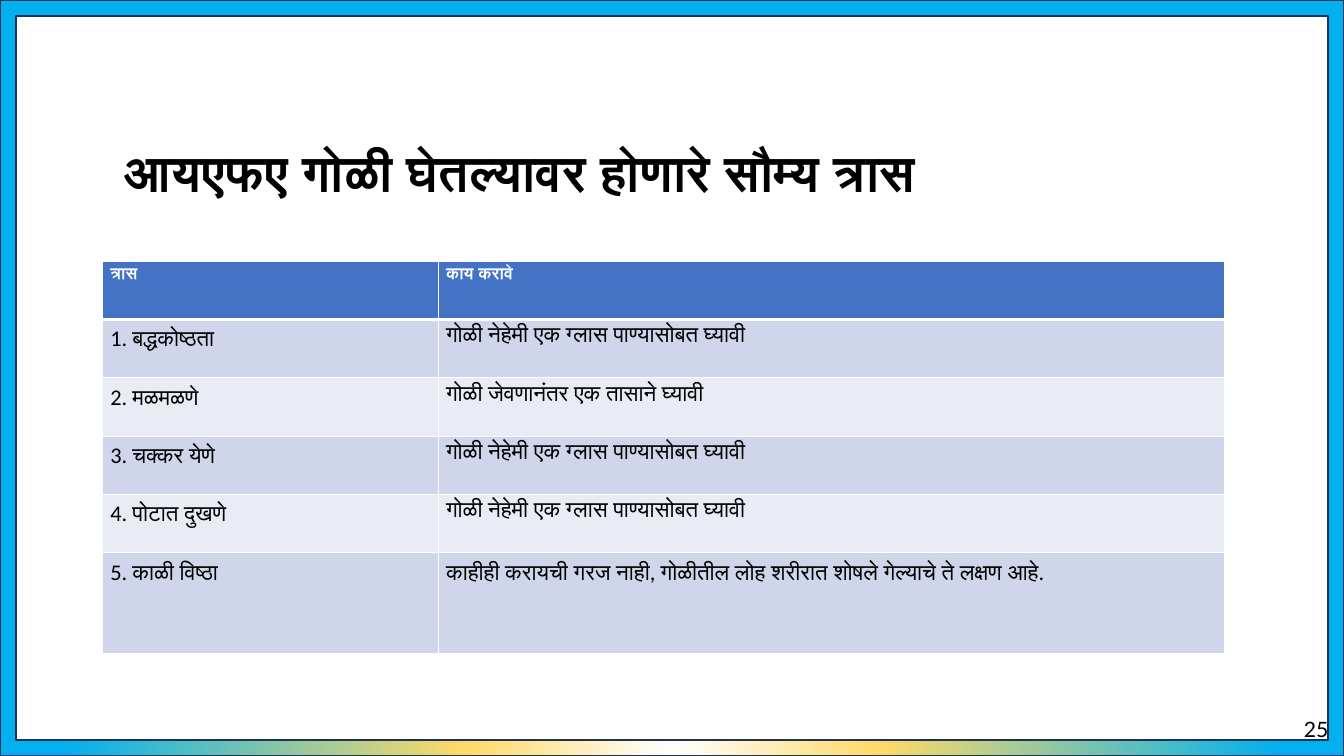
from pptx import Presentation
from pptx.dml.color import RGBColor
from pptx.enum.shapes import MSO_SHAPE as Shape
from pptx.enum.text import MSO_ANCHOR as Anchor
from pptx.oxml import parse_xml
from pptx.oxml.ns import nsdecls
from pptx.util import Cm, Pt

COLORS = {
    "ink": "000000", "white": "FFFFFF", "gold": "FFD966", "sky": "00B0F0",
    "frame_line": "1E3256", "header": "4472C4",
    "odd_row": "CFD5EA", "even_row": "E9EBF5",
}
TITLE_FORMAT = {"name": "Lato", "size": Pt(36), "bold": True}
NUMBER_FORMAT = {"name": "Lato", "size": Pt(15.1), "bold": False}
HEADER_FORMAT = {"name": "Calibri", "size": Pt(12), "bold": True}
BODY_FORMAT = {"name": "Calibri", "size": Pt(16), "bold": False}
CELL_MARGINS = {
    "margin_left": Cm(0.19), "margin_right": Cm(0.19),
    "margin_top": Cm(0.1), "margin_bottom": Cm(0.1),
}

WIDTH, HEIGHT = 33.87, 19.05
COLUMN_WIDTHS = [8.46, 19.81]
ROW_HEIGHTS = [1.47] * 5 + [2.54]
WITH_WATER = "गोळी नेहेमी एक ग्लास पाण्यासोबत घ्यावी"
REMEDIES = [
    ("त्रास", "काय करावे"),
    ("1. बद्धकोष्ठता", WITH_WATER),
    ("2. मळमळणे", "गोळी जेवणानंतर एक तासाने घ्यावी"),
    ("3. चक्कर येणे", WITH_WATER),
    ("4. पोटात दुखणे", WITH_WATER),
    ("5. काळी विष्ठा",
     "काहीही करायची गरज नाही, गोळीतील लोह शरीरात शोषले गेल्याचे ते लक्षण आहे."),
]


def color(name):
    return RGBColor.from_string(COLORS[name])


def set_all(target, values):
    for key, value in values.items():
        setattr(target, key, value)


def write(text_frame, text, font_format, ink="ink", spacing=1.0):
    para = text_frame.paragraphs[0]
    para.line_spacing = spacing
    span = para.add_run()
    span.text = text
    set_all(span.font, font_format)
    span.font.color.rgb = color(ink)


def add_text(page, box, text, font_format, anchor, wrap, spacing=1.0):
    text_frame = page.shapes.add_textbox(*map(Cm, box)).text_frame
    set_all(text_frame, {"word_wrap": wrap, "vertical_anchor": anchor})
    write(text_frame, text, font_format, spacing=spacing)


def add_frame(page, box):
    """Border with a radial gradient centred below the slide."""
    frame = page.shapes.add_shape(Shape.FRAME, *map(Cm, box))
    frame.adjustments[0] = 0.021
    frame.shadow.inherit = False
    frame.line.color.rgb = color("frame_line")
    frame.line.width = Pt(1)
    stops = "".join(
        f'<a:gs pos="{percent * 1000}"><a:srgbClr val="{COLORS[name]}"/></a:gs>'
        for percent, name in [(0, "white"), (27, "gold"), (79, "sky")])
    gradient = parse_xml(
        f'<a:gradFill {nsdecls("a")} rotWithShape="1"><a:gsLst>{stops}</a:gsLst>'
        '<a:path path="circle"><a:fillToRect l="50000" t="130000" '
        'r="50000" b="-30000"/></a:path></a:gradFill>')
    frame._element.spPr.prstGeom.addnext(gradient)


def add_borders(cell, row):
    widths = {"L": 1, "R": 1, "T": 3 if row == 1 else 1, "B": 3 if row == 0 else 1}
    properties = cell._tc.get_or_add_tcPr()
    for side, points in widths.items():
        properties.append(parse_xml(
            f'<a:ln{side} {nsdecls("a")} w="{Pt(points)}"><a:solidFill>'
            f'<a:srgbClr val="{COLORS["white"]}"/></a:solidFill></a:ln{side}>'))


def add_remedy_table(page, left, top):
    size = sum(COLUMN_WIDTHS), sum(ROW_HEIGHTS)
    table = page.shapes.add_table(
        len(REMEDIES), len(COLUMN_WIDTHS), *map(Cm, (left, top, *size))).table
    for column, width in zip(table.columns, COLUMN_WIDTHS):
        column.width = Cm(width)
    for index, (texts, height) in enumerate(zip(REMEDIES, ROW_HEIGHTS)):
        table.rows[index].height = Cm(height)
        if index == 0:
            fill, ink, font_format = "header", "white", HEADER_FORMAT
        else:
            fill = "odd_row" if index % 2 else "even_row"
            ink, font_format = "ink", BODY_FORMAT
        for cell, text in zip(table.rows[index].cells, texts):
            set_all(cell, CELL_MARGINS)
            add_borders(cell, index)
            cell.fill.solid()
            cell.fill.fore_color.rgb = color(fill)
            write(cell.text_frame, text, font_format, ink, spacing=1.07)


def main():
    deck = Presentation()
    deck.slide_width, deck.slide_height = Cm(WIDTH), Cm(HEIGHT)
    page = deck.slides.add_slide(deck.slide_layouts[6])
    add_text(page, (2.9, 2.26, 28.27, 4.32), "आयएफए गोळी घेतल्यावर होणारे सौम्य त्रास",
             TITLE_FORMAT, Anchor.MIDDLE, True, spacing=0.9)
    add_frame(page, (0, 0, WIDTH, HEIGHT))
    add_text(page, (32.61, 17.93, 1.24, 0.66), "25", NUMBER_FORMAT, Anchor.TOP, True)
    add_remedy_table(page, 2.59, 6.58)
    deck.save("out.pptx")


if __name__ == "__main__":
    main()
